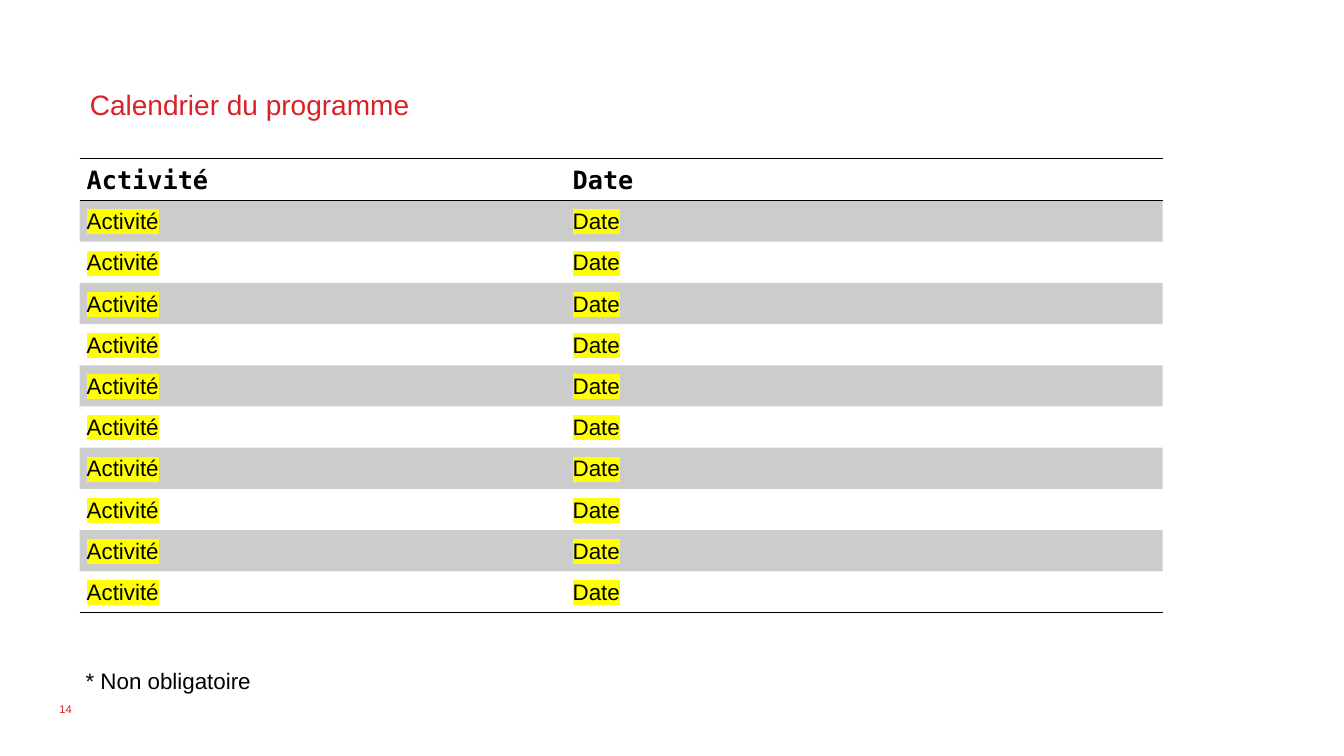
from dataclasses import dataclass

from lxml import etree
from pptx import Presentation
from pptx import util as u
from pptx.dml.color import RGBColor
from pptx.enum import text as t
from pptx.oxml.ns import qn

RED = RGBColor(0xDA, 0x21, 0x27)
BLACK = RGBColor(0, 0, 0)
YELLOW = RGBColor(0xFF, 0xFF, 0)
SLIDE_WIDTH, SLIDE_HEIGHT = u.Inches(13.33), u.Inches(7.5)
NO_STYLE = "{2D5ABB26-0587-4C30-8999-92F81FD0307C}"
HEADINGS = ("Activité", "Date")
ACTIVITY_COUNT = 10
COLUMN_SHARES = (36.16, 44.41)
HEADER_SHARE, ROW_SHARE = 5.6, 5.45
BAND_OPACITY = 20


@dataclass(frozen=True)
class Box:
    """Place on the slide, in percent of its width and height."""
    left: float
    top: float
    width: float
    height: float

    def lengths(self) -> tuple:
        return (across(self.left), down(self.top),
                across(self.width), down(self.height))


@dataclass(frozen=True)
class Note:
    text: str
    box: Box
    size: int
    color: RGBColor
    anchor: t.MSO_ANCHOR
    auto_size: t.MSO_AUTO_SIZE


TITLE_BOX = Box(5.93, 10.53, 86.2, 5.73)
TABLE_BOX = Box(5.93, 20.93, sum(COLUMN_SHARES),
                HEADER_SHARE + ACTIVITY_COUNT * ROW_SHARE)
NOTES = (
    Note("* Non obligatoire", Box(5.63, 87.6, 20.33, 4.93), 16, BLACK,
         t.MSO_ANCHOR.TOP, t.MSO_AUTO_SIZE.SHAPE_TO_FIT_TEXT),
    Note("14", Box(3.68, 91.07, 22.5, 5.33), 8, RED,
         t.MSO_ANCHOR.MIDDLE, t.MSO_AUTO_SIZE.NONE),
)


def across(share: float) -> int:
    return round(SLIDE_WIDTH * share / 100)


def down(share: float) -> int:
    return round(SLIDE_HEIGHT * share / 100)


def write(frame, words: str, *, size: int, color: RGBColor = BLACK,
          font: str = "Arial", bold: bool = False, spacing: float = 1.0,
          highlight: RGBColor | None = None) -> None:
    paragraph = frame.paragraphs[0]
    paragraph.alignment = t.PP_ALIGN.LEFT
    paragraph.line_spacing = spacing
    run = paragraph.add_run()
    run.text = words
    run.font.name, run.font.size, run.font.bold = font, u.Pt(size), bold
    run.font.color.rgb = color
    if highlight is not None:
        marker = etree.Element(qn("a:highlight"))
        etree.SubElement(marker, qn("a:srgbClr"), val=str(highlight))
        run.font.fill._xPr.find(qn("a:solidFill")).addnext(marker)


def add_title(slide) -> None:
    title = slide.shapes.title
    title.left, title.top, title.width, title.height = TITLE_BOX.lengths()
    frame = title.text_frame
    frame.word_wrap = True
    frame.vertical_anchor = t.MSO_ANCHOR.TOP
    frame.auto_size = t.MSO_AUTO_SIZE.SHAPE_TO_FIT_TEXT
    write(frame, "Calendrier du programme", size=20, color=RED, spacing=1.07)


def add_note(slide, note: Note) -> None:
    frame = slide.shapes.add_textbox(*note.box.lengths()).text_frame
    frame.word_wrap = True
    frame.vertical_anchor = note.anchor
    frame.auto_size = note.auto_size
    write(frame, note.text, size=note.size, color=note.color)


def set_borders(cell, sides: str) -> None:
    """Rule the given sides (T, B) in black; borders precede the fill."""
    properties = cell._tc.get_or_add_tcPr()
    for position, side in enumerate(sides):
        line = etree.Element(qn(f"a:ln{side}"), w=str(u.Pt(1)))
        fill = etree.SubElement(line, qn("a:solidFill"))
        etree.SubElement(fill, qn("a:srgbClr"), val=str(BLACK))
        properties.insert(position, line)


def fill_cell(cell, shaded: bool) -> None:
    if not shaded:
        cell.fill.background()
        return
    cell.fill.solid()
    cell.fill.fore_color.rgb = BLACK
    color = cell._tc.tcPr.find(".//" + qn("a:srgbClr"))
    etree.SubElement(color, qn("a:alpha"), val=str(BAND_OPACITY * 1000))


def add_calendar(slide) -> None:
    table = slide.shapes.add_table(ACTIVITY_COUNT + 1, len(HEADINGS),
                                   *TABLE_BOX.lengths()).table
    table.horz_banding = False
    table._tbl.tblPr.find(qn("a:tableStyleId")).text = NO_STYLE
    for column, share in zip(table.columns, COLUMN_SHARES):
        column.width = across(share)
    for index, row in enumerate(table.rows):
        header = index == 0
        row.height = down(HEADER_SHARE if header else ROW_SHARE)
        for cell, words in zip(row.cells, HEADINGS):
            cell.margin_left = cell.margin_right = u.Inches(0.07)
            cell.margin_top = cell.margin_bottom = 0
            cell.vertical_anchor = t.MSO_ANCHOR.MIDDLE
            fill_cell(cell, shaded=index % 2 == 1)
            if header:
                set_borders(cell, "TB")
                write(cell.text_frame, words, size=18, bold=True,
                      font="DejaVu Sans Mono", spacing=1.07)
            else:
                set_borders(cell, "B" if index == ACTIVITY_COUNT else "")
                write(cell.text_frame, words, size=16, spacing=1.07,
                      highlight=YELLOW)


def main() -> None:
    presentation = Presentation()
    presentation.slide_width = SLIDE_WIDTH
    presentation.slide_height = SLIDE_HEIGHT
    slide = presentation.slides.add_slide(presentation.slide_layouts[5])
    add_title(slide)
    for note in NOTES:
        add_note(slide, note)
    add_calendar(slide)
    presentation.save("out.pptx")


if __name__ == "__main__":
    main()
